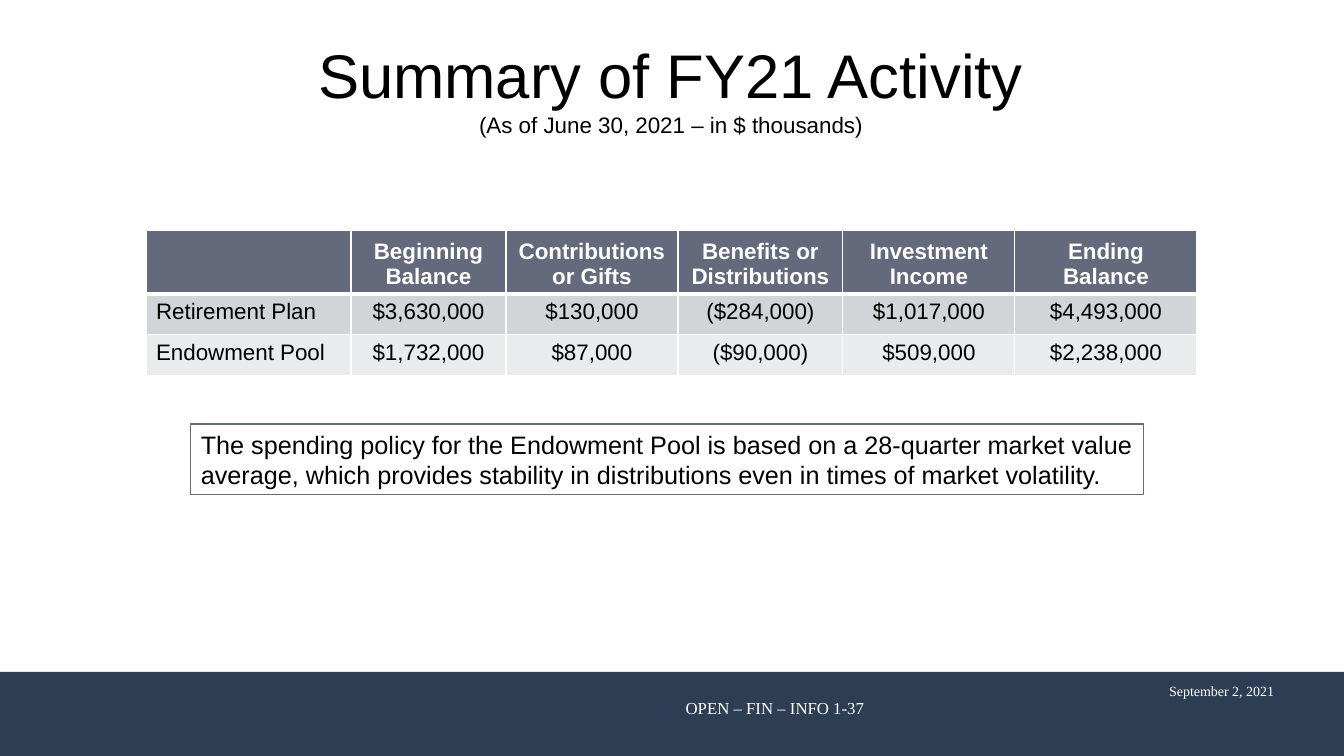
import pptx
import pptx.dml.color
import pptx.enum.shapes
import pptx.enum.text
import pptx.oxml
import pptx.oxml.ns
import pptx.util

PX = 9144000 / 1008  # EMU per px, 100.8 px to the inch
PP = pptx.enum.text.PP_ALIGN
ANCHOR = pptx.enum.text.MSO_ANCHOR
RECT = pptx.enum.shapes.MSO_SHAPE.RECTANGLE

THEME = {
    "navy": "2D3D54", "slate": "64697C", "row_dark": "D3D4D7", "row_light": "EAEBEC",
    "white": "FFFFFF", "black": "000000",
    "sans": "Arial", "serif": "Times New Roman",
    "title": 44, "note": 18, "table": 16, "footer": 12, "date": 10,
}


def box(*lengths):
    return [round(n * PX) for n in lengths]


def style(p, size, color="black", font="sans", align=PP.CENTER, bold=False):
    p.alignment = align
    for f in [p.font] + [r.font for r in p.runs]:
        f.size = pptx.util.Pt(THEME[size])
        f.name = THEME[font]
        f.bold = bold
        f.color.rgb = pptx.dml.color.RGBColor.from_string(THEME[color])


prs = pptx.Presentation()
prs.slide_width, prs.slide_height = box(1344, 756)
s = prs.slides.add_slide(prs.slide_layouts[5])

# Footer band with page reference and date
band = s.shapes.add_shape(RECT, *box(0, 672, 1344, 84))
band.shadow.inherit = False
band.fill.solid()
band.fill.fore_color.rgb = pptx.dml.color.RGBColor.from_string(THEME["navy"])
band.line.fill.background()

for text, place, size, align in [
    ("September 2, 2021", (1132, 678, 152, 27), "date", PP.RIGHT),
    ("OPEN – FIN – INFO 1-37", (672, 693, 206, 30), "footer", PP.CENTER),
]:
    tf = s.shapes.add_textbox(*box(*place)).text_frame
    tf.word_wrap = True
    tf.text = text
    style(tf.paragraphs[0], size, "white", "serif", align)

# Title and subtitle
title = s.shapes.title
title.left, title.top, title.width, title.height = box(297, 32, 748, 112)
tf = title.text_frame
tf.auto_size = pptx.enum.text.MSO_AUTO_SIZE.NONE
tf.vertical_anchor = ANCHOR.TOP
tf.text = "Summary of FY21 Activity\n(As of June 30, 2021 – in $ thousands)"
for p, size in zip(tf.paragraphs, ("title", "table")):
    style(p, size)

# Activity table
ROWS = [
    ["", "Beginning Balance", "Contributions or Gifts", "Benefits or Distributions",
     "Investment Income", "Ending Balance"],
    ["Retirement Plan", "$3,630,000", "$130,000", "($284,000)", "$1,017,000", "$4,493,000"],
    ["Endowment Pool", "$1,732,000", "$87,000", "($90,000)", "$509,000", "$2,238,000"],
]
WIDTHS = [205, 155, 172, 165, 172, 182]
FILLS = ["slate", "row_dark", "row_light"]
HEIGHTS = [63, 41, 41]

table = s.shapes.add_table(
    len(ROWS), len(WIDTHS), *box(146, 230, sum(WIDTHS), sum(HEIGHTS))).table
for column, width in zip(table.columns, WIDTHS):
    column.width = round(width * PX)
for i, values in enumerate(ROWS):
    table.rows[i].height = round(HEIGHTS[i] * PX)
    header = i == 0
    for j, value in enumerate(values):
        cell = table.cell(i, j)
        cell.text = value
        cell.vertical_anchor = ANCHOR.BOTTOM if header else ANCHOR.TOP
        style(cell.text_frame.paragraphs[0], "table", "white" if header else "black",
              align=PP.CENTER if j else PP.LEFT, bold=header)
        cell.fill.solid()
        cell.fill.fore_color.rgb = pptx.dml.color.RGBColor.from_string(THEME[FILLS[i]])
        # White borders, thicker between header and body
        thick = {"lnB": header, "lnT": i == 1}
        for k, side in enumerate(("lnL", "lnR", "lnT", "lnB")):
            width = pptx.util.Pt(3 if thick.get(side) else 1)
            cell._tc.get_or_add_tcPr().insert(k, pptx.oxml.parse_xml(
                f'<a:{side} {pptx.oxml.ns.nsdecls("a")} w="{width}"><a:solidFill>'
                f'<a:srgbClr val="{THEME["white"]}"/></a:solidFill></a:{side}>'))

# Spending policy note
note = s.shapes.add_shape(RECT, *box(191, 424, 953, 71))
note.shadow.inherit = False
note.fill.background()
note.line.color.rgb = pptx.dml.color.RGBColor.from_string(THEME["slate"])
note.line.width = pptx.util.Pt(0.75)
tf = note.text_frame
tf.word_wrap = True
tf.vertical_anchor = ANCHOR.TOP
tf.text = ("The spending policy for the Endowment Pool is based on a 28-quarter market value "
           "average, which provides stability in distributions even in times of market volatility.")
style(tf.paragraphs[0], "note", align=PP.LEFT)

prs.save("out.pptx")
